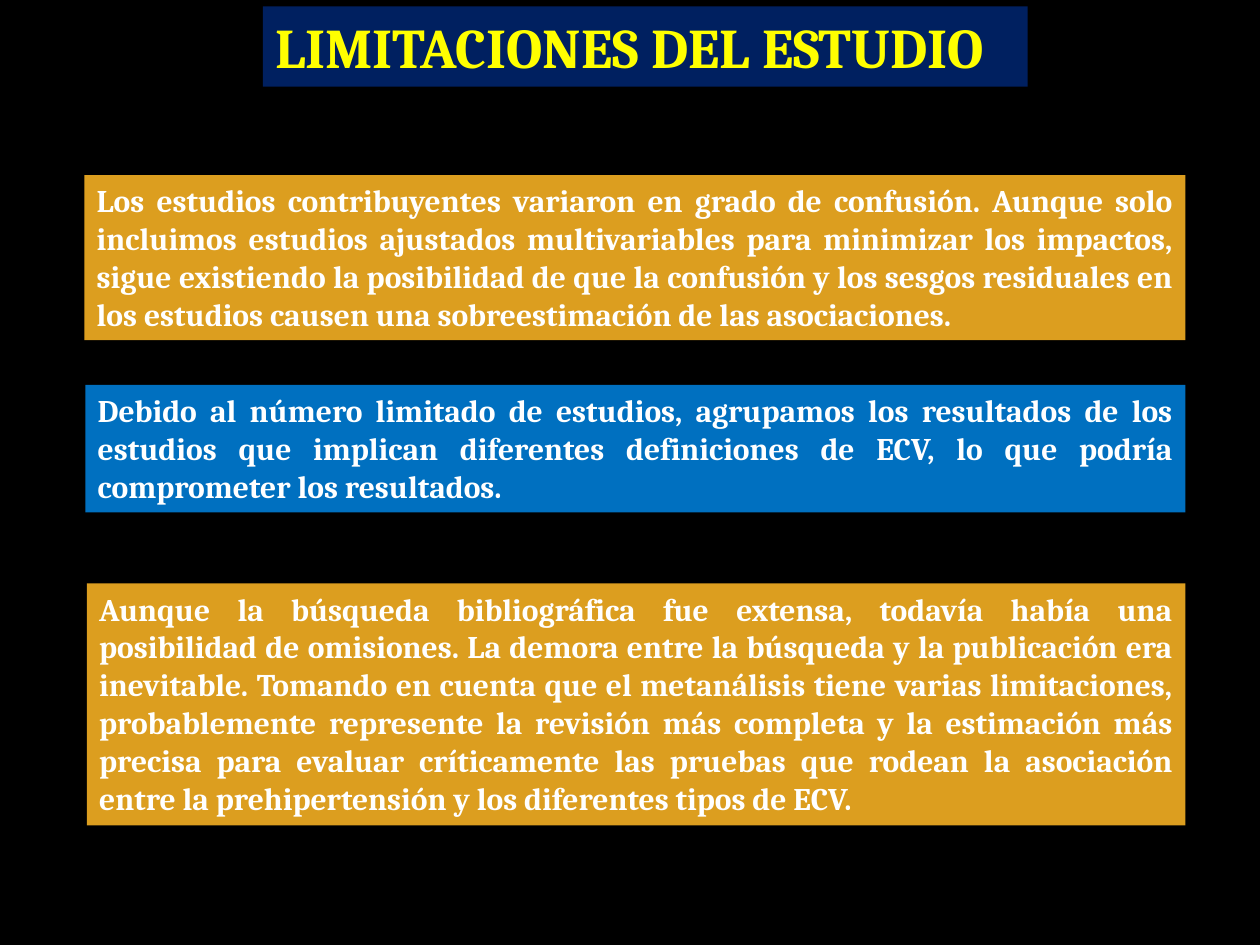
from pptx import Presentation
from pptx.dml.color import RGBColor
from pptx.enum.shapes import MSO_SHAPE
from pptx.enum.text import MSO_ANCHOR, PP_ALIGN
from pptx.util import Cm, Pt

RECTANGLE = MSO_SHAPE.RECTANGLE
TOP = MSO_ANCHOR.TOP
LEFT, JUSTIFY = PP_ALIGN.LEFT, PP_ALIGN.JUSTIFY

BLACK = RGBColor(0x00, 0x00, 0x00)
WHITE = RGBColor(0xFF, 0xFF, 0xFF)
YELLOW = RGBColor(0xFF, 0xFF, 0x00)
NAVY = RGBColor(0x00, 0x20, 0x60)
GOLD = RGBColor(0xDC, 0x9E, 0x1F)
BLUE = RGBColor(0x00, 0x70, 0xC0)

TITLE = "LIMITACIONES DEL ESTUDIO"
RIGHT_EDGE = 23.9
LIMITATIONS = [
    (1.7, 3.53, 3.33, GOLD,
     "Los estudios contribuyentes variaron en grado de confusión. Aunque solo "
     "incluimos estudios ajustados multivariables para minimizar los impactos, "
     "sigue existiendo la posibilidad de que la confusión y los sesgos residuales "
     "en los estudios causen una sobreestimación de las asociaciones."),
    (1.72, 7.76, 2.57, BLUE,
     "Debido al número limitado de estudios, agrupamos los resultados de los "
     "estudios que implican diferentes definiciones de ECV, lo que podría "
     "comprometer los resultados."),
    (1.75, 11.76, 4.88, GOLD,
     "Aunque la búsqueda bibliográfica fue extensa, todavía había una posibilidad "
     "de omisiones. La demora entre la búsqueda y la publicación era inevitable. "
     "Tomando en cuenta que el metanálisis tiene varias limitaciones, "
     "probablemente represente la revisión más completa y la estimación más "
     "precisa para evaluar críticamente las pruebas que rodean la asociación "
     "entre la prehipertensión y los diferentes tipos de ECV."),
]

TITLE_FORMAT = {"name": "Cambria", "size": Pt(32), "bold": True}
BODY_FORMAT = {"name": "Cambria", "size": Pt(18), "bold": True}


def add_panel(page, left, top, width, height, fill, text, align, font_format, color):
    box = page.shapes.add_shape(RECTANGLE, Cm(left), Cm(top), Cm(width), Cm(height))
    box.shadow.inherit = False
    box.fill.solid()
    box.fill.fore_color.rgb = fill
    box.line.fill.background()
    frame = box.text_frame
    frame.word_wrap = True
    frame.vertical_anchor = TOP
    para = frame.paragraphs[0]
    para.alignment = align
    span = para.add_run()
    span.text = text
    for key, value in font_format.items():
        setattr(span.font, key, value)
    span.font.color.rgb = color


def main():
    deck = Presentation()
    deck.slide_width, deck.slide_height = Cm(25.4), Cm(19.05)
    page = deck.slides.add_slide(deck.slide_layouts[6])
    page.background.fill.solid()
    page.background.fill.fore_color.rgb = BLACK

    add_panel(page, 5.3, 0.13, 15.42, 1.62, NAVY, TITLE, LEFT, TITLE_FORMAT, YELLOW)
    for left, top, height, fill, text in LIMITATIONS:
        add_panel(page, left, top, RIGHT_EDGE - left, height, fill, text,
                  JUSTIFY, BODY_FORMAT, WHITE)

    deck.save("out.pptx")


if __name__ == "__main__":
    main()
